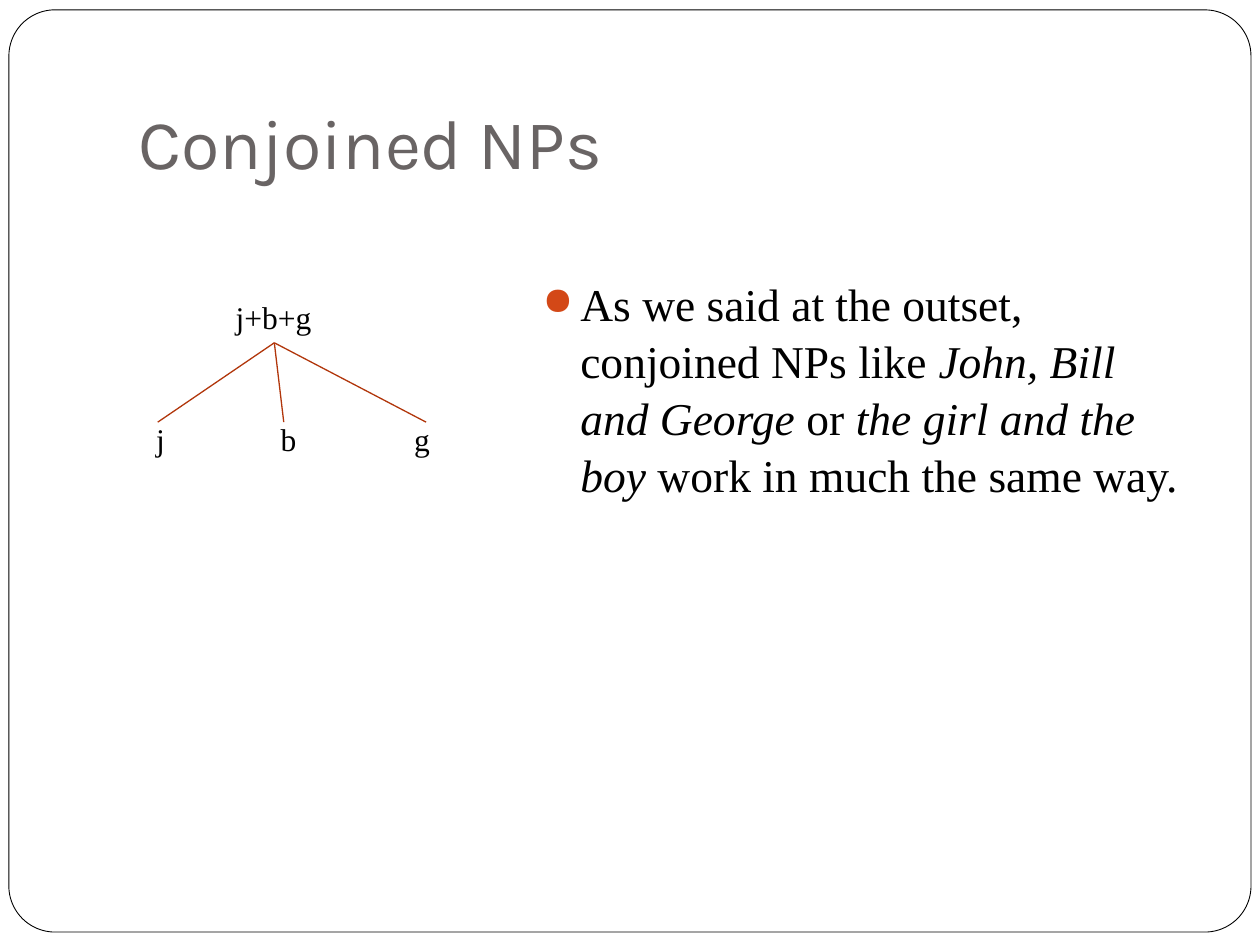
from dataclasses import dataclass

import lxml.etree
import pptx
import pptx.dml.color
import pptx.enum.shapes
import pptx.enum.text
import pptx.oxml.ns
import pptx.util
from pptx.util import Cm, Pt


def rgb(value):
    return pptx.dml.color.RGBColor.from_string(value)


@dataclass(frozen=True)
class Theme:
    paper: str = "FFFFFF"
    ink: str = "000000"
    heading: str = "696464"
    bullet: str = "D34817"
    branch: str = "B1360B"
    heading_font: str = "Karla"
    text_font: str = "Times New Roman"
    heading_size: int = 40
    body_size: int = 26
    node_size: int = 18


THEME = Theme()


def set_font(paragraph, name, size, color):
    paragraph.font.name = name
    paragraph.font.size = Pt(size)
    paragraph.font.color.rgb = rgb(color)


def add_frame(slide):
    frame = slide.shapes.add_shape(
        pptx.enum.shapes.MSO_SHAPE.ROUNDED_RECTANGLE,
        Cm(0.18), Cm(0.2), Cm(25.04), Cm(18.59))
    frame.adjustments[0] = 0.05
    frame.shadow.inherit = False
    frame.fill.solid()
    frame.fill.fore_color.rgb = rgb(THEME.paper)
    frame.line.color.rgb = rgb(THEME.ink)
    frame.line.width = Pt(0.5)
    # The frame lies behind the title
    slide.shapes.title.element.addprevious(frame.element)


def format_title(title, text):
    title.left, title.top = Cm(2.54), Cm(0.76)
    title.width, title.height = Cm(21.59), Cm(3.18)
    frame = title.text_frame
    frame.text = text
    frame.vertical_anchor = pptx.enum.text.MSO_ANCHOR.BOTTOM
    frame.margin_bottom = Cm(0.25)
    frame.auto_size = pptx.enum.text.MSO_AUTO_SIZE.NONE
    paragraph = frame.paragraphs[0]
    paragraph.alignment = pptx.enum.text.PP_ALIGN.LEFT
    set_font(paragraph, THEME.heading_font, THEME.heading_size, THEME.heading)


def add_bullet(paragraph):
    properties = paragraph._p.get_or_add_pPr()
    properties.set("marL", str(Cm(0.76)))
    properties.set("indent", str(-Cm(0.76)))

    def append(parent, tag, **attributes):
        return lxml.etree.SubElement(parent, pptx.oxml.ns.qn(tag), attributes)

    append(append(properties, "a:buClr"), "a:srgbClr", val=THEME.bullet)
    append(properties, "a:buSzPct", val="85000")
    append(properties, "a:buChar", char="●")


def add_body(slide, pieces):
    body = slide.shapes.add_textbox(Cm(10.69), Cm(4.01), Cm(13.41), Cm(12.7))
    frame = body.text_frame
    frame.word_wrap = True
    frame.margin_top = Cm(1.49)
    paragraph = frame.paragraphs[0]
    paragraph.line_spacing = 1.05
    add_bullet(paragraph)
    set_font(paragraph, THEME.text_font, THEME.body_size, THEME.ink)
    for text, italic in pieces:
        run = paragraph.add_run()
        run.text = text
        run.font.italic = italic


def add_node(slide, text, left, top, width):
    node = slide.shapes.add_textbox(Cm(left), Cm(top), Cm(width), Cm(1.02))
    frame = node.text_frame
    frame.text = text
    frame.word_wrap = False
    frame.auto_size = pptx.enum.text.MSO_AUTO_SIZE.SHAPE_TO_FIT_TEXT
    set_font(frame.paragraphs[0], THEME.text_font, THEME.node_size, THEME.ink)
    return node


def add_branch(slide, root, end_x, end_y):
    branch = slide.shapes.add_connector(
        pptx.enum.shapes.MSO_CONNECTOR.STRAIGHT,
        root.left, root.top, Cm(end_x), Cm(end_y))
    branch.begin_connect(root, 2)
    branch.line.color.rgb = rgb(THEME.branch)
    branch.line.width = Pt(0.75)
    lxml.etree.SubElement(branch._element.spPr,
                          pptx.oxml.ns.qn("a:effectLst"))


def add_tree(slide):
    root = add_node(slide, "j+b+g", 4.5, 5.89, 2.06)
    # Label, its left edge and width, and the end of its branch
    leaves = [("j", 2.9, 0.66, 3.18),
              ("b", 5.41, 0.79, 5.72),
              ("g", 8.1, 0.79, 8.59)]
    for text, left, width, branch_x in leaves:
        add_node(slide, text, left, 8.35, width)
        add_branch(slide, root, branch_x, 8.51)


def main():
    deck = pptx.Presentation()
    deck.slide_width, deck.slide_height = Cm(25.4), Cm(19.05)
    slide = deck.slides.add_slide(deck.slide_layouts[5])

    # Frame and title
    add_frame(slide)
    format_title(slide.shapes.title, "Conjoined NPs")

    # Explanation
    add_body(slide, [
        ("As we said at the outset, conjoined NPs like ", False),
        ("John, Bill and George", True),
        (" or ", False),
        ("the girl and the boy", True),
        (" work in much the same way.", False),
    ])

    # Tree of the sum and its parts
    add_tree(slide)
    deck.save("out.pptx")


if __name__ == "__main__":
    main()
